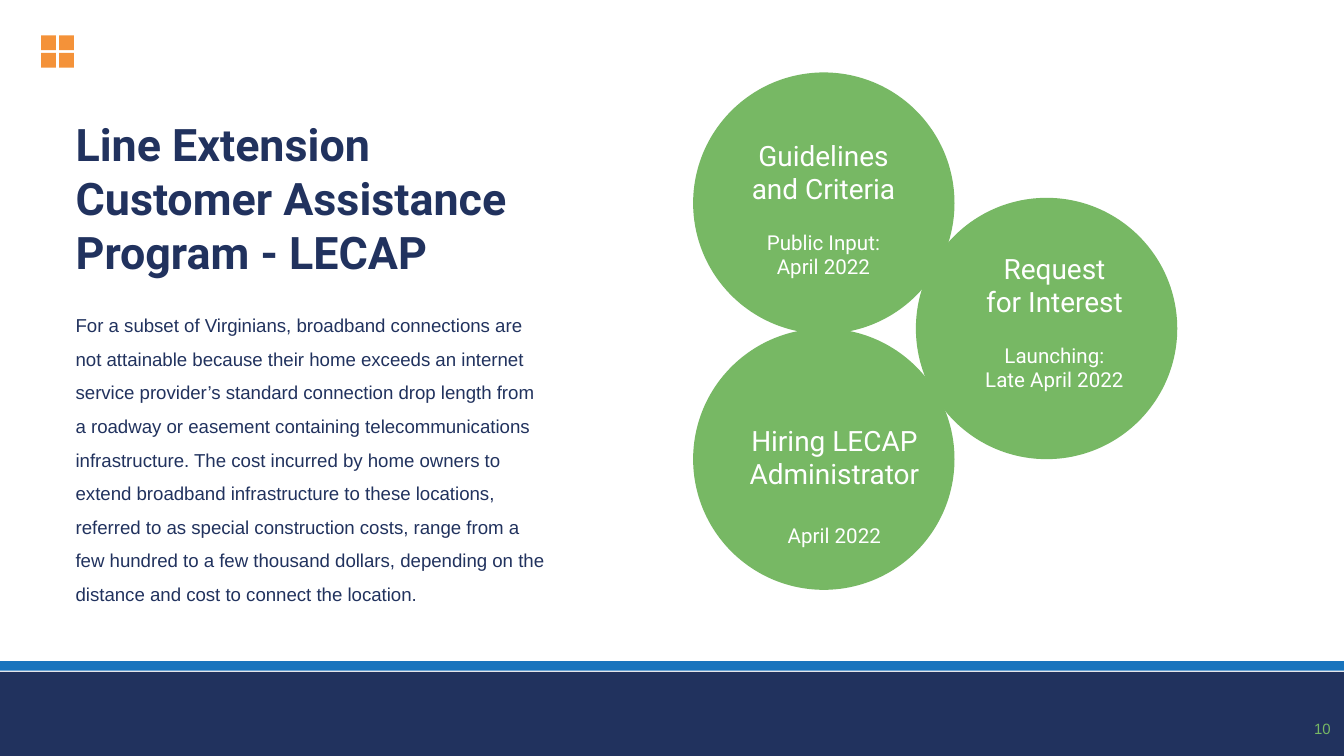
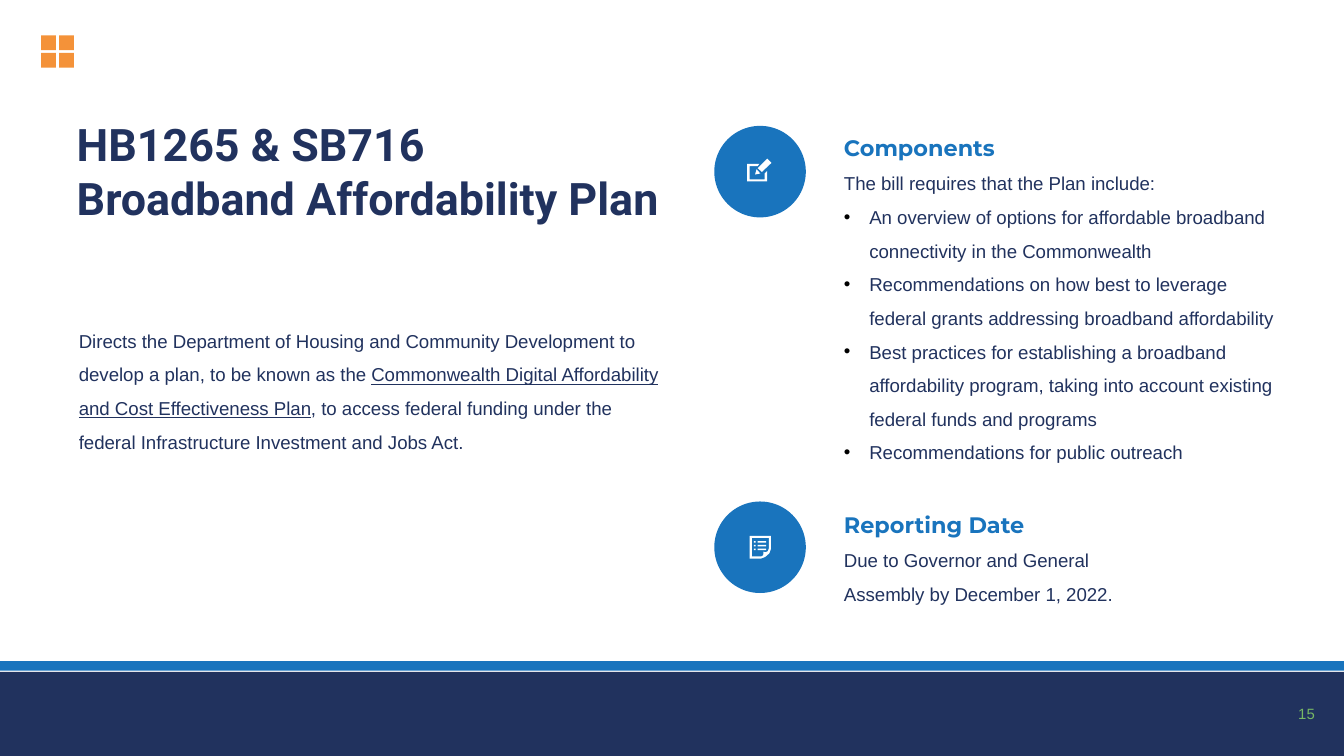
from dataclasses import dataclass
from typing import Optional

from lxml import etree
from pptx import Presentation
from pptx.dml.color import RGBColor
from pptx.enum.shapes import MSO_SHAPE
from pptx.enum.text import MSO_ANCHOR, PP_ALIGN
from pptx.oxml.ns import qn
from pptx.util import Cm, Pt

RECTANGLE = MSO_SHAPE.RECTANGLE
OVAL = MSO_SHAPE.OVAL
LEFT, CENTER, RIGHT = PP_ALIGN.LEFT, PP_ALIGN.CENTER, PP_ALIGN.RIGHT
TOP, MIDDLE = MSO_ANCHOR.TOP, MSO_ANCHOR.MIDDLE

COLORS = {
    "navy": "21325E",
    "blue": "1974BD",
    "orange": "F49239",
    "green": "77B864",
    "white": "FFFFFF",
    "black": "000000",
}
TITLE_FONT, HEADING_FONT, BODY_FONT = "Roboto", "Montserrat", "Arial"
SLIDE_WIDTH, SLIDE_HEIGHT = 25.4, 14.29
BAND_TOP, STRIPE_TOP, STRIPE_HEIGHT = 12.7, 12.5, 0.18
TITLE_TOP = 2.21
STEP_DIAMETER, ICON_DIAMETER = 4.94, 1.73
ICON_LEFT, TOPIC_LEFT = 13.5, 15.77
BULLET_INDENT = 0.48
INSET_X, INSET_Y = 0.18, 0.1


@dataclass(frozen=True)
class Area:
    left: float
    top: float
    width: float
    height: float

    def lengths(self) -> tuple:
        return Cm(self.left), Cm(self.top), Cm(self.width), Cm(self.height)


@dataclass(frozen=True)
class Step:
    left: float
    top: float
    label: Area
    name: str
    gap: float
    dates: tuple


@dataclass(frozen=True)
class Topic:
    icon_top: float
    area: Area
    heading: str
    text: str
    bullets: tuple
    icon_origin: tuple
    icon: list


def add_filled(page, kind, area: Area, color: str):
    shape = page.shapes.add_shape(kind, *area.lengths())
    finish_shape(shape, color)
    return shape


def finish_shape(shape, color: str) -> None:
    shape.shadow.inherit = False
    shape.fill.solid()
    shape.fill.fore_color.rgb = RGBColor.from_string(COLORS[color])
    shape.line.fill.background()


def add_box(page, area: Area, inset_x: float = 0, inset_y: float = 0, anchor=TOP):
    frame = page.shapes.add_textbox(*area.lengths()).text_frame
    frame.word_wrap = True
    frame.vertical_anchor = anchor
    frame.margin_left = frame.margin_right = Cm(inset_x)
    frame.margin_top = frame.margin_bottom = Cm(inset_y)
    return frame


def add_span(para, text: str, *, size: float = 10, font: str = BODY_FONT,
             color: str = "navy", bold: bool = False, underline: bool = False) -> None:
    span = para.add_run()
    span.text = text
    span.font.size = Pt(size)
    span.font.name = font
    span.font.bold = bold
    span.font.underline = underline
    span.font.color.rgb = RGBColor.from_string(COLORS[color])


def add_para(frame, text: str = "", *, align=LEFT, spacing: Optional[float] = None,
             before: float = 0, bullet: bool = False, **span_format):
    first = frame.paragraphs[0]
    para = first if not first.runs else frame.add_paragraph()
    para.alignment = align
    para.space_before = Pt(before)
    if spacing:
        para.line_spacing = spacing
    if bullet:
        add_bullet(para)
    if text:
        add_span(para, text, **span_format)
    return para


def add_bullet(para) -> None:
    properties = para._p.get_or_add_pPr()
    properties.set("marL", str(Cm(BULLET_INDENT)))
    properties.set("indent", str(-Cm(BULLET_INDENT)))
    bullet_color = etree.SubElement(properties, qn("a:buClr"))
    etree.SubElement(bullet_color, qn("a:srgbClr")).set("val", COLORS["black"])
    etree.SubElement(properties, qn("a:buFont")).set("typeface", BODY_FONT)
    etree.SubElement(properties, qn("a:buChar")).set("char", "•")


def add_icon(page, origin: tuple, contours: list) -> None:
    builder = page.shapes.build_freeform(*contours[0][0], scale=float(Cm(0.01)))
    for index, contour in enumerate(contours):
        if index:
            builder.move_to(*contour[0])
        builder.add_line_segments(contour[1:], close=True)
    finish_shape(builder.convert_to_shape(Cm(origin[0]), Cm(origin[1])), "white")


def rectangle_points(left: int, top: int, right: int, bottom: int) -> list:
    return [(left, top), (right, top), (right, bottom), (left, bottom)]


def add_page(deck, title_lines: list, title_area: Area, number: str, number_area: Area):
    page = deck.slides.add_slide(deck.slide_layouts[6])
    for row in range(2):
        for column in range(2):
            square = Area(0.78 + column * 0.34, 0.67 + row * 0.33, 0.28, 0.28)
            add_filled(page, RECTANGLE, square, "orange")
    add_filled(page, RECTANGLE,
               Area(0, BAND_TOP, SLIDE_WIDTH, SLIDE_HEIGHT - BAND_TOP), "navy")
    add_filled(page, RECTANGLE, Area(0, STRIPE_TOP, SLIDE_WIDTH, STRIPE_HEIGHT), "blue")
    title = add_box(page, title_area)
    for line in title_lines:
        add_para(title, line, size=24, font=TITLE_FONT, bold=True)
    footer = add_box(page, number_area, 0.25, 0.25, MIDDLE)
    add_para(footer, number, align=RIGHT, size=8, color="green")
    return page


PENCIL = [
    [(46, 8), (28, 25), (20, 18), (38, 0)],
    [(18, 20), (25, 28), (15, 30)],
    [(38, 23), (38, 43), (0, 43), (0, 10), (23, 10), (20, 14), (5, 14),
     (5, 39), (33, 39), (33, 28)],
]
DOCUMENT = [
    [(40, 0), (0, 0), (0, 43), (21, 43), (29, 40), (37, 33), (40, 25)],
    [(4, 4), (36, 4), (36, 24), (34, 29), (30, 31), (26, 30), (26, 35),
     (24, 38), (21, 39), (4, 39)],
] + [
    rectangle_points(left, top, right, top + 3)
    for top in (10, 17, 24)
    for left, right in ((8, 11), (15, 31))
]

STEPS = [
    Step(13.1, 1.37, Area(13.89, 2.51, 3.35, 2.11), "Guidelines and Criteria", 13,
         ("Public Input: April 2022",)),
    Step(17.31, 3.74, Area(18.42, 4.65, 3.02, 2.11), "Request for Interest", 13,
         ("Launching:", "Late April 2022")),
    Step(13.1, 6.21, Area(13.94, 7.9, 3.66, 1.78), "Hiring LECAP Administrator", 17.6,
         ("April 2022",)),
]

TOPICS = [
    Topic(2.38, Area(TOPIC_LEFT, 2.18, 8.59, 2.06), "Components",
          "The bill requires that the Plan include:",
          ("An overview of options for affordable broadband connectivity in the Commonwealth",
           "Recommendations on how best to leverage federal grants addressing broadband "
           "affordability",
           "Best practices for establishing a broadband affordability program, taking into "
           "account existing federal funds and programs",
           "Recommendations for public outreach"),
          (14.12, 3.0), PENCIL),
    Topic(9.48, Area(TOPIC_LEFT, 9.3, 6.22, 2.06), "Reporting Date",
          "Due to Governor and General Assembly by December 1, 2022.", (),
          (14.17, 10.13), DOCUMENT),
]


def build_lecap(deck) -> None:
    page = add_page(deck, ["Line Extension Customer Assistance Program - LECAP"],
                    Area(1.43, TITLE_TOP, 8.94, 3.07), "10", Area(23.42, 13.26, 1.98, 1.03))
    body = add_box(page, Area(1.43, 5.72, 8.94, 5.77))
    add_para(
        body,
        "For a subset of Virginians, broadband connections are not attainable because their "
        "home exceeds an internet service provider’s standard connection drop length from a "
        "roadway or easement containing telecommunications infrastructure. The cost incurred "
        "by home owners to extend broadband infrastructure to these locations, referred to as "
        "special construction costs, range from a few hundred to a few thousand dollars, "
        "depending on the distance and cost to connect the location.",
        spacing=1.5)
    for step in STEPS:
        add_filled(page, OVAL, Area(step.left, step.top, STEP_DIAMETER, STEP_DIAMETER), "green")
    for step in STEPS:
        label = add_box(page, step.label, INSET_X, INSET_Y)
        add_para(label, step.name, align=CENTER, size=15, font=TITLE_FONT, color="white")
        for index, date in enumerate(step.dates):
            add_para(label, date, align=CENTER, before=0 if index else step.gap,
                     size=11, font=TITLE_FONT, color="white")


def build_affordability(deck) -> None:
    page = add_page(deck, ["HB1265 & SB716", "Broadband Affordability Plan"],
                    Area(1.45, TITLE_TOP, 11.25, 2.06), "15", Area(23.42, 12.7, 1.68, 1.59))
    body = add_box(page, Area(1.49, 6.02, 11.2, 2.57))
    para = add_para(
        body,
        "Directs the Department of Housing and Community Development to develop a plan, "
        "to be known as the ",
        spacing=1.5)
    add_span(para, "Commonwealth Digital Affordability and Cost Effectiveness Plan",
             underline=True)
    add_span(para, ", to access federal funding under the federal Infrastructure Investment "
                   "and Jobs Act.")
    for topic in TOPICS:
        add_filled(page, OVAL,
                   Area(ICON_LEFT, topic.icon_top, ICON_DIAMETER, ICON_DIAMETER), "blue")
        add_icon(page, topic.icon_origin, topic.icon)
        box = add_box(page, topic.area, INSET_X, INSET_Y)
        add_para(box, topic.heading, spacing=1.5, size=12, font=HEADING_FONT,
                 color="blue", bold=True)
        add_para(box, topic.text, spacing=1.5)
        for bullet in topic.bullets:
            add_para(box, bullet, spacing=1.5, bullet=True)


def main() -> None:
    deck = Presentation()
    deck.slide_width, deck.slide_height = Cm(SLIDE_WIDTH), Cm(SLIDE_HEIGHT)
    build_lecap(deck)
    build_affordability(deck)
    deck.save("out.pptx")


if __name__ == "__main__":
    main()
